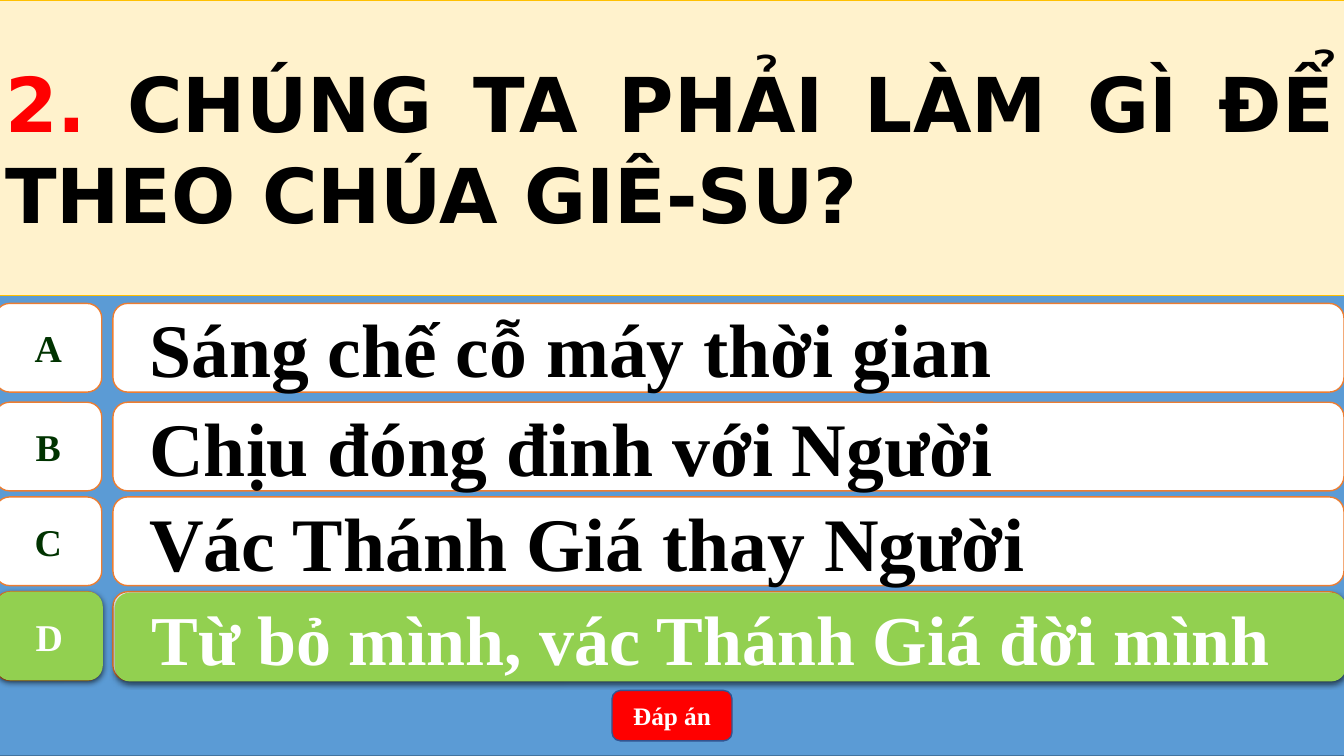
from lxml import etree
from pptx import Presentation
from pptx.dml.color import RGBColor
from pptx.enum.shapes import MSO_SHAPE
from pptx.enum.text import MSO_ANCHOR, MSO_AUTO_SIZE, PP_ALIGN
from pptx.oxml.ns import qn
from pptx.util import Inches, Pt

RECT = MSO_SHAPE.RECTANGLE
ROUNDED = MSO_SHAPE.ROUNDED_RECTANGLE
TILE = MSO_SHAPE.FLOWCHART_ALTERNATE_PROCESS
MIDDLE = MSO_ANCHOR.MIDDLE
LEFT, CENTER, JUSTIFY = PP_ALIGN.LEFT, PP_ALIGN.CENTER, PP_ALIGN.JUSTIFY
SERIF, SANS = "Times New Roman", "DejaVu Sans"


def rgb(color):
    return RGBColor.from_string(color)


def add_box(kind, left, top, width, height, fill, line=None, text="",
            size=18, color="FFFFFF", align=CENTER):
    box = slide.shapes.add_shape(kind, Inches(left), Inches(top),
                                 Inches(width), Inches(height))
    box.shadow.inherit = False
    box.fill.solid()
    box.fill.fore_color.rgb = rgb(fill)
    if line:
        box.line.color.rgb = rgb(line)
        box.line.width = Pt(1)
    else:
        box.line.fill.background()
    if text:
        box.text_frame.vertical_anchor = MIDDLE
        box.text_frame.word_wrap = kind != TILE
        paragraph = box.text_frame.paragraphs[0]
        paragraph.alignment = align
        run = paragraph.add_run()
        run.text = text
        run.font.name, run.font.size, run.font.bold = SERIF, Pt(size), True
        run.font.color.rgb = rgb(color)
        if align == LEFT:
            # Answers hang from an indented second level
            paragraph.level = 1
            properties = paragraph._p.get_or_add_pPr()
            properties.set("marL", str(Inches(0.5)))
            properties.set("indent", str(Inches(-0.28)))
    return box


prs = Presentation()
prs.slide_width, prs.slide_height = Inches(13.33), Inches(7.5)
slide = prs.slides.add_slide(prs.slide_layouts[5])

# Blue backdrop
add_box(RECT, -0.05, 0, 13.39, 7.5, "5B9BD5", "43739E")

# Answer rows: the last one lies under the highlighted answer
rows = [
    (3.01, "A", "Sáng chế cỗ máy thời gian"),
    (3.99, "B", "Chịu đóng đinh với Người"),
    (4.93, "C", "Vác Thánh Giá thay Người"),
    (5.87, "", ""),
]
for top, letter, answer in rows:
    add_box(TILE, -0.05, top, 1.06, 0.88, "FFFFFF", "ED7D31",
            letter, 27, "003300")
    add_box(ROUNDED, 1.12, top, 12.21, 0.88, "FFFFFF", "ED7D31",
            answer, 54, "000000", LEFT)

# Answer button
add_box(ROUNDED, 6.07, 6.85, 1.19, 0.5, "FF0000", "325491", "Đáp án")

# Highlighted correct answer with a soft shadow
correct_letter = add_box(TILE, -0.04, 5.87, 1.06, 0.88, "92D050",
                         text="D", size=27)
correct_answer = add_box(ROUNDED, 1.14, 5.88, 12.21, 0.88, "92D050",
                         text="Từ bỏ mình, vác Thánh Giá đời mình",
                         size=50, align=LEFT)
for highlighted in (correct_letter, correct_answer):
    effects = highlighted._element.spPr.find(qn("a:effectLst"))
    shadow = etree.SubElement(effects, qn("a:outerShdw"),
                              blurRad=str(Pt(4.5)), dist=str(Pt(1.5)),
                              dir="5400000", algn="ctr", rotWithShape="0")
    black = etree.SubElement(shadow, qn("a:srgbClr"), val="000000")
    etree.SubElement(black, qn("a:alpha"), val="63000")

# Question panel, brought to the front
question = slide.shapes.title
question.left, question.top = Inches(-0.05), Inches(0)
question.width, question.height = Inches(13.39), Inches(2.93)
question.fill.solid()
question.fill.fore_color.rgb = rgb("FFF2CC")
question.line.color.rgb = rgb("FFC000")
question.line.width = Pt(0.5)
question.text_frame.auto_size = MSO_AUTO_SIZE.NONE
question.text_frame.word_wrap = True
question.text_frame.vertical_anchor = MIDDLE
wording = question.text_frame.paragraphs[0]
wording.alignment = JUSTIFY
for text, color in (("2. ", "FF0000"),
                    ("CHÚNG TA PHẢI LÀM GÌ ĐỂ THEO CHÚA GIÊ-SU?", "000000")):
    run = wording.add_run()
    run.text = text
    run.font.name, run.font.size, run.font.bold = SANS, Pt(54), True
    run.font.color.rgb = rgb(color)
slide.shapes._spTree.append(question._element)

prs.save("out.pptx")
